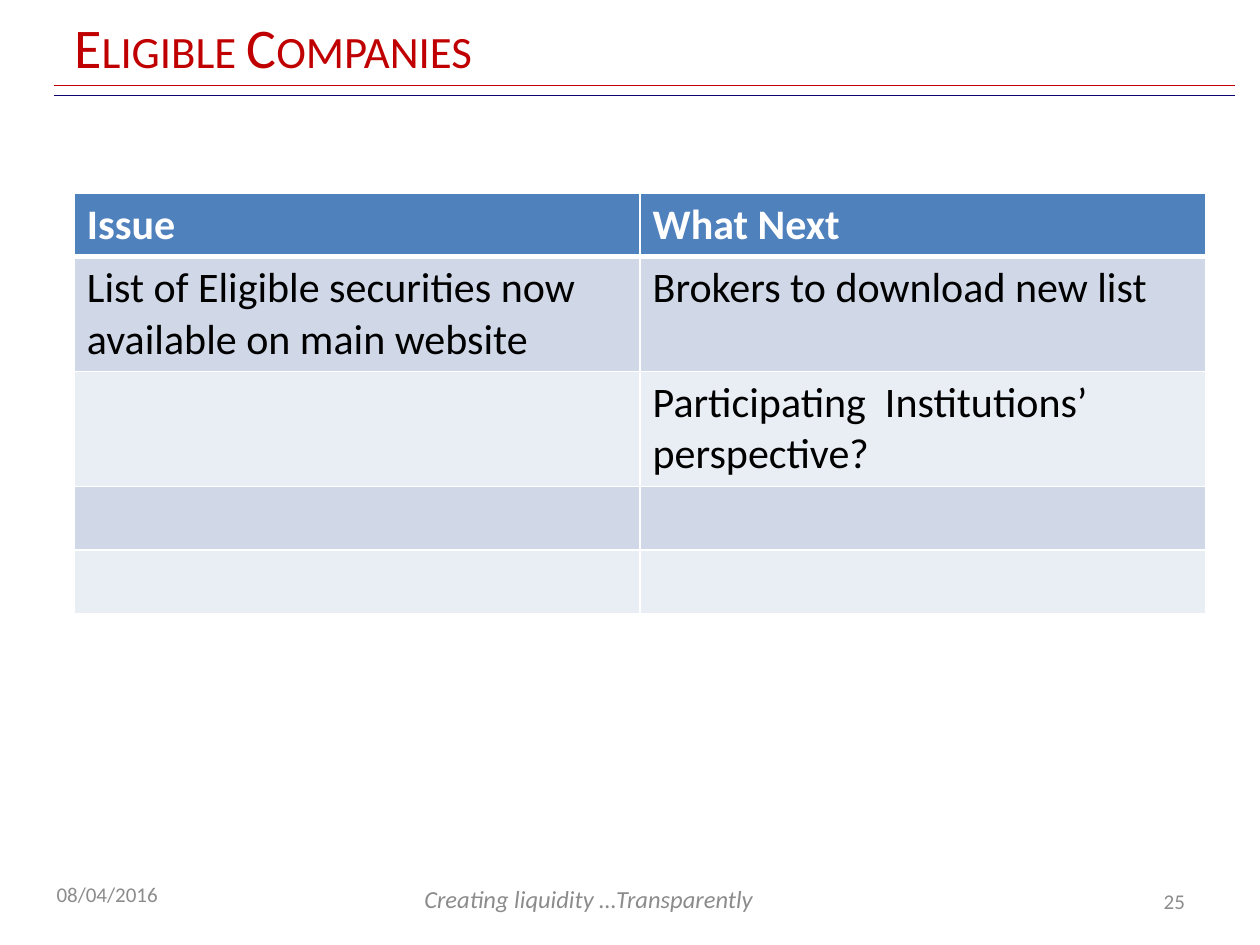
from dataclasses import dataclass

from lxml.etree import SubElement
from pptx import Presentation
from pptx.dml.color import RGBColor
from pptx.enum.shapes import MSO_CONNECTOR
from pptx.enum.text import MSO_ANCHOR, PP_ALIGN
from pptx.oxml import parse_xml
from pptx.oxml.ns import nsdecls, qn
from pptx.util import Pt


@dataclass(frozen=True)
class Theme:
    font: str = "Calibri"
    red: str = "C00000"
    navy: str = "0A0571"
    grey: str = "8C8C8C"
    white: str = "FFFFFF"
    black: str = "000000"
    header: str = "4F81BD"
    bands: tuple = ("D0D8E8", "E9EDF4")
    title_size: int = 32
    table_size: int = 24
    slogan_size: int = 14
    footer_size: int = 12


THEME = Theme()
ROWS = [
    ("Issue", "What Next"),
    ("List of Eligible securities now available on main website",
     "Brokers to download new list"),
    ("", "Participating  Institutions’ perspective?"),
    ("", ""),
    ("", ""),
]
ROW_HEIGHTS = (36.5, 65.6, 65.6, 36.5, 36.5)


def add_run(p, text, size, color, bold=False, italic=False):
    r = p.add_run()
    r.text = text
    font = r.font
    font.name, font.size = THEME.font, Pt(size)
    font.bold, font.italic = bold, italic
    font.color.rgb = RGBColor.from_string(color)
    return r


def add_title(slide, text):
    sp = slide.shapes.title
    sp.left, sp.top, sp.width, sp.height = Pt(35.3), Pt(4.3), Pt(573), Pt(44)
    tf = sp.text_frame
    tf.vertical_anchor = MSO_ANCHOR.MIDDLE
    p = tf.paragraphs[0]
    p.alignment = PP_ALIGN.LEFT
    r = add_run(p, text, THEME.title_size, THEME.red)
    r.font._element.set("cap", "small")


def add_rule(slide, y, color):
    line = slide.shapes.add_connector(
        MSO_CONNECTOR.STRAIGHT, Pt(31), Pt(y), Pt(705.6), Pt(y))
    line.line.width = Pt(0.75)
    line.line.color.rgb = RGBColor.from_string(color)
    SubElement(line._element.spPr, qn("a:effectLst"))


def add_footer(slide, text, left, top, width, size=THEME.footer_size,
               align=PP_ALIGN.LEFT, anchor=MSO_ANCHOR.MIDDLE, italic=False):
    sp = slide.shapes.add_textbox(Pt(left), Pt(top), Pt(width), Pt(28.8))
    tf = sp.text_frame
    tf.word_wrap = True
    tf.vertical_anchor = anchor
    p = tf.paragraphs[0]
    p.alignment = align
    add_run(p, text, size, THEME.grey, italic=italic)


def set_borders(cell, top, bottom):
    """Draw white borders; they must come before the fill in the cell XML."""
    tc_pr = cell._tc.get_or_add_tcPr()
    widths = (("lnL", 1), ("lnR", 1), ("lnT", top), ("lnB", bottom))
    for i, (tag, width) in enumerate(widths):
        tc_pr.insert(i, parse_xml(
            f'<a:{tag} {nsdecls("a")} w="{Pt(width)}"><a:solidFill>'
            f'<a:srgbClr val="{THEME.white}"/></a:solidFill></a:{tag}>'))


def add_issue_table(slide):
    frame = slide.shapes.add_table(
        len(ROWS), 2, Pt(42.5), Pt(110.2), Pt(646.6), Pt(sum(ROW_HEIGHTS)))
    table = frame.table
    for i, (texts, height) in enumerate(zip(ROWS, ROW_HEIGHTS)):
        is_header = i == 0
        table.rows[i].height = Pt(height)
        fill = THEME.header if is_header else THEME.bands[(i - 1) % 2]
        color = THEME.white if is_header else THEME.black
        for cell, text in zip(table.rows[i].cells, texts):
            cell.fill.solid()
            cell.fill.fore_color.rgb = RGBColor.from_string(fill)
            set_borders(cell, top=3 if i == 1 else 1,
                        bottom=3 if is_header else 1)
            if text:
                add_run(cell.text_frame.paragraphs[0], text,
                        THEME.table_size, color, bold=is_header)


def main():
    prs = Presentation()
    prs.slide_width, prs.slide_height = Pt(720), Pt(540)
    slide = prs.slides.add_slide(prs.slide_layouts[5])
    add_rule(slide, 54.7, THEME.navy)
    add_rule(slide, 49, THEME.red)
    add_footer(slide, "Creating liquidity …Transparently", 235.4, 501.8, 228.2,
               size=THEME.slogan_size, anchor=MSO_ANCHOR.TOP, italic=True)
    add_footer(slide, "08/04/2016", 25.2, 496.8, 168)
    add_title(slide, "Eligible Companies")
    add_footer(slide, "25", 516.2, 500.4, 168, align=PP_ALIGN.RIGHT)
    add_issue_table(slide)
    prs.save("out.pptx")


if __name__ == "__main__":
    main()
